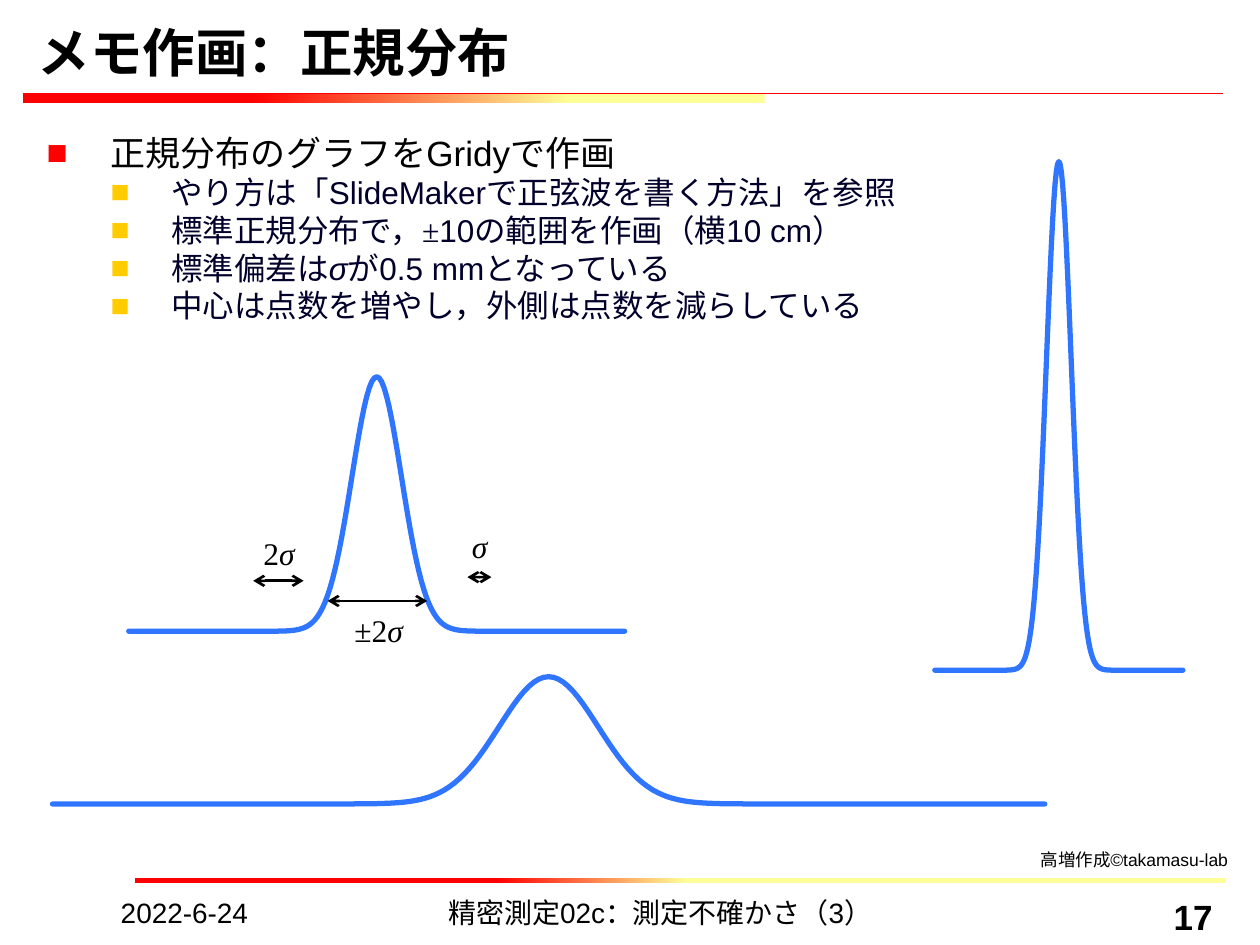
import math

from lxml import etree
from pptx import Presentation
from pptx.dml.color import RGBColor
from pptx.enum.shapes import MSO_CONNECTOR, MSO_SHAPE
from pptx.enum.text import MSO_ANCHOR, MSO_AUTO_SIZE, PP_ALIGN
from pptx.oxml.ns import qn
from pptx.util import Pt

LEFT, CENTER, RIGHT = PP_ALIGN.LEFT, PP_ALIGN.CENTER, PP_ALIGN.RIGHT
BLACK = RGBColor(0x00, 0x00, 0x00)
NAVY = RGBColor(0x00, 0x00, 0x2A)
RED = RGBColor(0xFF, 0x00, 0x00)
YELLOW = RGBColor(0xFF, 0xFF, 0x99)
GOLD = RGBColor(0xFF, 0xCC, 0x00)
BLUE = RGBColor(0x30, 0x75, 0xFF)
SANS, SERIF = "Arial", "Times New Roman"

# A run is (text, font, italic)
TITLE = "メモ作画：正規分布"
BODY = [
    (0, [("正規分布のグラフをGridyで作画", SANS, False)]),
    (1, [("やり方は「SlideMakerで正弦波を書く方法」を参照", SANS, False)]),
    (1, [("標準正規分布で，", SANS, False), ("±", SERIF, False),
         ("10の範囲を作画（横10 cm）", SANS, False)]),
    (1, [("標準偏差は", SANS, False), ("σ", SANS, True),
         ("が0.5 mmとなっている", SANS, False)]),
    (1, [("中心は点数を増やし，外側は点数を減らしている", SANS, False)]),
]
# level: size, text colour, bullet colour, left margin, hanging, line pitch
LEVELS = {
    0: (20, BLACK, RED, 36.7, 36.7, 24),
    1: (18, NAVY, GOLD, 71.3, 34.6, 21.6),
}

# left, top, width, height, yellow stop, red stop (counted from the right)
BARS = [
    (77, 501.8, 623.5, 2.9, 0.5, 0.68),
    (89.3, 501.8, 607, 2.9, 0.5, 0.68),
    (13, 53.3, 424, 5.4, 0.26, 0.69),
]
TITLE_RULE = (13, 53.3, 699, 53.3)

# centre x, baseline y, sigma; each curve spans ±10 sigma and has equal area
CURVES = [
    (215.3, 360.7, 14.17),
    (313.5, 459.4, 28.35),
    (605.1, 383, 7.09),
]
PEAK_TIMES_SIGMA = 2061
# left, right, y
ARROWS = [(144.7, 173.5, 331.9), (267.1, 280.8, 329.8), (187.2, 244.1, 343.4)]

# left, top, runs
SIGMA_LABELS = [
    (189.4, 346.3, [("±2", SERIF, False), ("σ", SERIF, True)]),
    (132.5, 302.4, [("2", SERIF, False), ("σ", SERIF, True)]),
    (247, 298.1, [("σ", SERIF, True)]),
]
# left, width, size, bold, alignment, text
FOOTER = [
    (61.9, 156, 16, False, LEFT, "2022-6-24"),
    (190, 374.5, 16, False, CENTER, "精密測定02c：測定不確かさ（3）"),
    (581, 119, 20, True, RIGHT, "17"),
]
CREDIT = "高増作成©takamasu-lab"


def place(sp, left, top, width, height):
    sp.left, sp.top, sp.width, sp.height = map(Pt, (left, top, width, height))


def add_runs(p, runs, size, color=BLACK, bold=False):
    for text, font, italic in runs:
        r = p.add_run()
        r.text = text
        r.font.name = font
        r.font.size = Pt(size)
        r.font.bold = bold
        r.font.italic = italic
        r.font.color.rgb = color


def add_text(slide, box, runs, size, align=LEFT, bold=False, inset=None):
    tf = slide.shapes.add_textbox(*map(Pt, box)).text_frame
    tf.word_wrap = True
    if inset is not None:
        tf.margin_left = tf.margin_right = Pt(inset)
        tf.margin_top = tf.margin_bottom = Pt(inset)
        tf.auto_size = MSO_AUTO_SIZE.SHAPE_TO_FIT_TEXT
    p = tf.paragraphs[0]
    p.alignment = align
    add_runs(p, runs, size, bold=bold)


def set_bullet(p, color, margin, hanging):
    pPr = p._p.get_or_add_pPr()
    pPr.set("marL", str(Pt(margin)))
    pPr.set("indent", str(-Pt(hanging)))
    clr = etree.SubElement(pPr, qn("a:buClr"))
    etree.SubElement(clr, qn("a:srgbClr"), val=str(color))
    etree.SubElement(pPr, qn("a:buFont"), typeface=SANS)
    etree.SubElement(pPr, qn("a:buChar"), char="■")


def add_bar(slide, left, top, width, height, yellow_at, red_at):
    sp = slide.shapes.add_shape(MSO_SHAPE.RECTANGLE,
                                *map(Pt, (left, top, width, height)))
    sp.shadow.inherit = False
    sp.line.fill.background()
    sp.fill.gradient()
    sp.fill.gradient_angle = 180
    stops = zip(sp.fill.gradient_stops, ((yellow_at, YELLOW), (red_at, RED)))
    for stop, (position, color) in stops:
        stop.position = position
        stop.color.rgb = color


def add_line(slide, x1, y1, x2, y2, color, width, arrows=False):
    cxn = slide.shapes.add_connector(MSO_CONNECTOR.STRAIGHT,
                                     *map(Pt, (x1, y1, x2, y2)))
    cxn.line.color.rgb = color
    cxn.line.width = Pt(width)
    if arrows:
        ln = cxn.line._get_or_add_ln()
        for end in ("a:headEnd", "a:tailEnd"):
            etree.SubElement(ln, qn(end), type="arrow")
    etree.SubElement(cxn._element.spPr, qn("a:effectLst"))


def add_normal_curve(slide, center, base, sigma):
    peak = PEAK_TIMES_SIGMA / sigma
    steps = [-10] + [i / 10 for i in range(-45, 46)] + [10]
    points = [(Pt(center + z * sigma), Pt(base - peak * math.exp(-z * z / 2)))
              for z in steps]
    builder = slide.shapes.build_freeform(*points[0])
    builder.add_line_segments(points[1:], close=False)
    sp = builder.convert_to_shape()
    sp.shadow.inherit = False
    sp.fill.background()
    sp.line.color.rgb = BLUE
    sp.line.width = Pt(3)
    ln = sp.line._get_or_add_ln()
    ln.set("cap", "rnd")
    etree.SubElement(ln, qn("a:round"))


def main():
    prs = Presentation()
    prs.slide_width, prs.slide_height = Pt(720), Pt(540)
    slide = prs.slides.add_slide(prs.slide_layouts[1])
    title, body = slide.placeholders

    for bar in BARS:
        add_bar(slide, *bar)
    add_line(slide, *TITLE_RULE, RED, 0.75)

    place(title, 14.4, 15.1, 686, 36)
    tf = title.text_frame
    tf.auto_size = MSO_AUTO_SIZE.NONE
    tf.vertical_anchor = MSO_ANCHOR.BOTTOM
    tf.paragraphs[0].alignment = LEFT
    add_runs(tf.paragraphs[0], [(TITLE, SANS, False)], 30, bold=True)

    place(body, 19.4, 71.3, 680.4, 425.5)
    tf = body.text_frame
    tf.auto_size = MSO_AUTO_SIZE.NONE
    for i, (level, runs) in enumerate(BODY):
        size, color, bullet, margin, hanging, pitch = LEVELS[level]
        p = tf.add_paragraph() if i else tf.paragraphs[0]
        p.level = level
        set_bullet(p, bullet, margin, hanging)
        p.line_spacing = Pt(pitch)
        p.space_before = Pt(0)
        add_runs(p, runs, size, color)

    for curve in CURVES:
        add_normal_curve(slide, *curve)
    for x1, x2, y in ARROWS:
        add_line(slide, x1, y, x2, y, BLACK, 1.5, arrows=True)
    for left, top, runs in SIGMA_LABELS:
        add_text(slide, (left, top, 54, 27.4), runs, 18, CENTER, inset=2.9)

    for left, width, size, bold, align, text in FOOTER:
        add_text(slide, (left, 508.3, width, 20.9), [(text, SANS, False)],
                 size, align, bold)
    add_text(slide, (591.8, 482.4, 128.2, 18), [(CREDIT, SANS, False)], 10,
             inset=2.9)

    prs.save("out.pptx")


if __name__ == "__main__":
    main()
